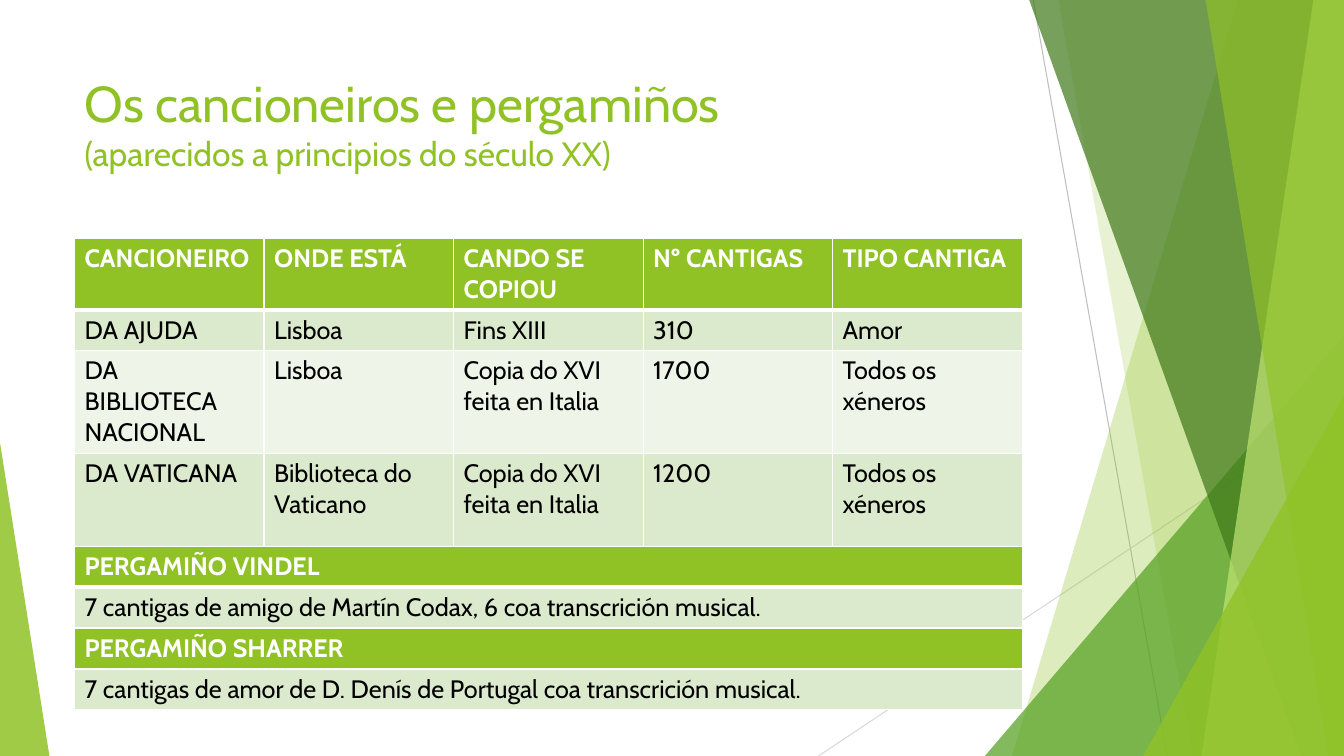
from lxml import etree
from pptx import Presentation
from pptx import util as u
from pptx.dml.color import RGBColor
from pptx.enum import shapes, text
from pptx.oxml import ns

LIME = RGBColor(0x90, 0xC2, 0x26)
GREEN = RGBColor(0x54, 0xA0, 0x21)
DARK = RGBColor(0x3F, 0x78, 0x19)
PALE = RGBColor(0xC0, 0xE4, 0x74)
BAND = RGBColor(0xDB, 0xE9, 0xCD)
LIGHT = RGBColor(0xEE, 0xF4, 0xE8)
WHITE = RGBColor(0xFF, 0xFF, 0xFF)
BLACK = RGBColor(0x00, 0x00, 0x00)
GREY = RGBColor(0xBF, 0xBF, 0xBF)
MIST = RGBColor(0xD9, 0xD9, 0xD9)

LEFT, WIDE = 5.55, 70.5  # text area, in percent of the slide's width


class Deck:
    """Holds the style and the slide; lengths are percent of its size."""

    font = "Cabin"

    def __init__(self):
        self.prs = Presentation()
        self.prs.slide_width = u.Inches(13.33)
        self.prs.slide_height = u.Inches(7.5)
        self.slide = self.prs.slides.add_slide(self.prs.slide_layouts[5])
        self.items = self.slide.shapes

    def x(self, share):
        return round(self.prs.slide_width * share / 100)

    def y(self, share):
        return round(self.prs.slide_height * share / 100)

    def box(self, left, top, width, height):
        return self.x(left), self.y(top), self.x(width), self.y(height)

    def style(self, run, size, color, bold=False):
        run.font.name = self.font
        run.font.size = u.Pt(size)
        run.font.color.rgb = color
        run.font.bold = bold

    def paint(self, shape, color, alpha):
        shape.shadow.inherit = False
        shape.line.fill.background()
        shape.fill.solid()
        shape.fill.fore_color.rgb = color
        tint = shape.fill._xPr.find(".//" + ns.qn("a:srgbClr"))
        etree.SubElement(tint, ns.qn("a:alpha"), val=str(alpha * 1000))

    def line(self, start, end, color):
        link = self.items.add_connector(
            shapes.MSO_CONNECTOR.STRAIGHT,
            self.x(start[0]), self.y(start[1]), self.x(end[0]), self.y(end[1]))
        link.line.color.rgb = color
        link.line.width = u.Pt(0.75)
        etree.SubElement(link._element.spPr, ns.qn("a:effectLst"))

    def shard(self, head, foot, color, alpha):
        """Full-height shape from a slanted left edge to the slide's right."""
        edge = [(100, 0), (100, 100), (foot, 100)]
        form = self.items.build_freeform(self.x(head), 0)
        form.add_line_segments([(self.x(a), self.y(b)) for a, b in edge])
        self.paint(form.convert_to_shape(), color, alpha)

    def wedge(self, left, top, width, apex, color, alpha):
        """Triangle that stands on the slide's foot."""
        shape = self.items.add_shape(
            shapes.MSO_SHAPE.ISOSCELES_TRIANGLE,
            *self.box(left, top, width, 100 - top))
        shape.adjustments[0] = apex
        self.paint(shape, color, alpha)

    def title(self, words, sizes, place):
        head = self.items.title
        head.left, head.top, head.width, head.height = self.box(*place)
        frame = head.text_frame
        frame.text = words
        frame.word_wrap = True
        frame.auto_size = text.MSO_AUTO_SIZE.NONE
        frame.vertical_anchor = text.MSO_ANCHOR.TOP
        para = frame.paragraphs[0]
        para.alignment = text.PP_ALIGN.LEFT
        for run, size in zip(para.runs, sizes):
            self.style(run, size, LIME)

    def border(self, cell, widths):
        props = cell._tc.get_or_add_tcPr()
        for side, width in zip("LRTB", widths):
            edge = etree.SubElement(props, ns.qn("a:ln" + side), w=str(u.Pt(width)))
            fill = etree.SubElement(edge, ns.qn("a:solidFill"))
            etree.SubElement(fill, ns.qn("a:srgbClr"), val=str(WHITE))

    def table(self, top, rows, heights, fills):
        """Rows filled with LIME are headings; the first has a thick rule."""
        grid = self.items.add_table(
            len(rows), len(rows[0]),
            *self.box(LEFT, top, WIDE, sum(heights))).table
        for r, (row, height, fill) in enumerate(zip(rows, heights, fills)):
            grid.rows[r].height = self.y(height)
            head = fill == LIME
            for c, words in enumerate(row):
                cell = grid.cell(r, c)
                cell.text_frame.text = words
                self.style(cell.text_frame.paragraphs[0].runs[0], 18,
                           WHITE if head else BLACK, head)
                self.border(cell, (1, 1, 3 if r == 1 else 1, 3 if r == 0 else 1))
                cell.fill.solid()
                cell.fill.fore_color.rgb = fill


def main():
    deck = Deck()

    # Thin lines and green facets
    deck.line((76.88, 0), (86.85, 100), GREY)
    deck.line((100, 53.73), (60.9, 100), MIST)
    deck.shard(92.1, 75.3, LIME, 30)
    deck.shard(78.75, 88.72, LIME, 20)
    deck.wedge(73.28, 44.4, 26.72, 1, GREEN, 72)
    deck.shard(76.58, 96.82, DARK, 70)
    deck.shard(97.72, 89.4, PALE, 70)
    deck.shard(89.7, 98.85, LIME, 65)
    deck.wedge(85.05, 52.4, 14.95, 1, LIME, 80)
    deck.wedge(0, 58.53, 3.68, 0, LIME, 85)

    # Title
    deck.title("Os cancioneiros e pergamiños\v(aparecidos a principios do século XX)",
               (36, 24), (LEFT, 8.93, WIDE, 19.2))

    # Songbooks
    deck.table(31.47, [
        ("CANCIONEIRO", "ONDE ESTÁ", "CANDO SE COPIOU", "Nº CANTIGAS", "TIPO CANTIGA"),
        ("DA AJUDA", "Lisboa", "Fins XIII", "310", "Amor"),
        ("DA BIBLIOTECA NACIONAL", "Lisboa", "Copia do XVI feita en Italia",
         "1700", "Todos os xéneros"),
        ("DA VATICANA", "Biblioteca do Vaticano", "Copia do XVI feita en Italia",
         "1200", "Todos os xéneros"),
    ], (9.5, 5.4, 13.6, 12.3), (LIME, BAND, LIGHT, BAND))

    # Parchments
    deck.table(72.27, [
        ("PERGAMIÑO VINDEL",),
        ("7 cantigas de amigo de Martín Codax, 6 coa transcrición musical.",),
        ("PERGAMIÑO SHARRER",),
        ("7 cantigas de amor de D. Denís de Portugal coa transcrición musical.",),
    ], (5.4,) * 4, (LIME, BAND) * 2)

    deck.prs.save("out.pptx")


if __name__ == "__main__":
    main()
